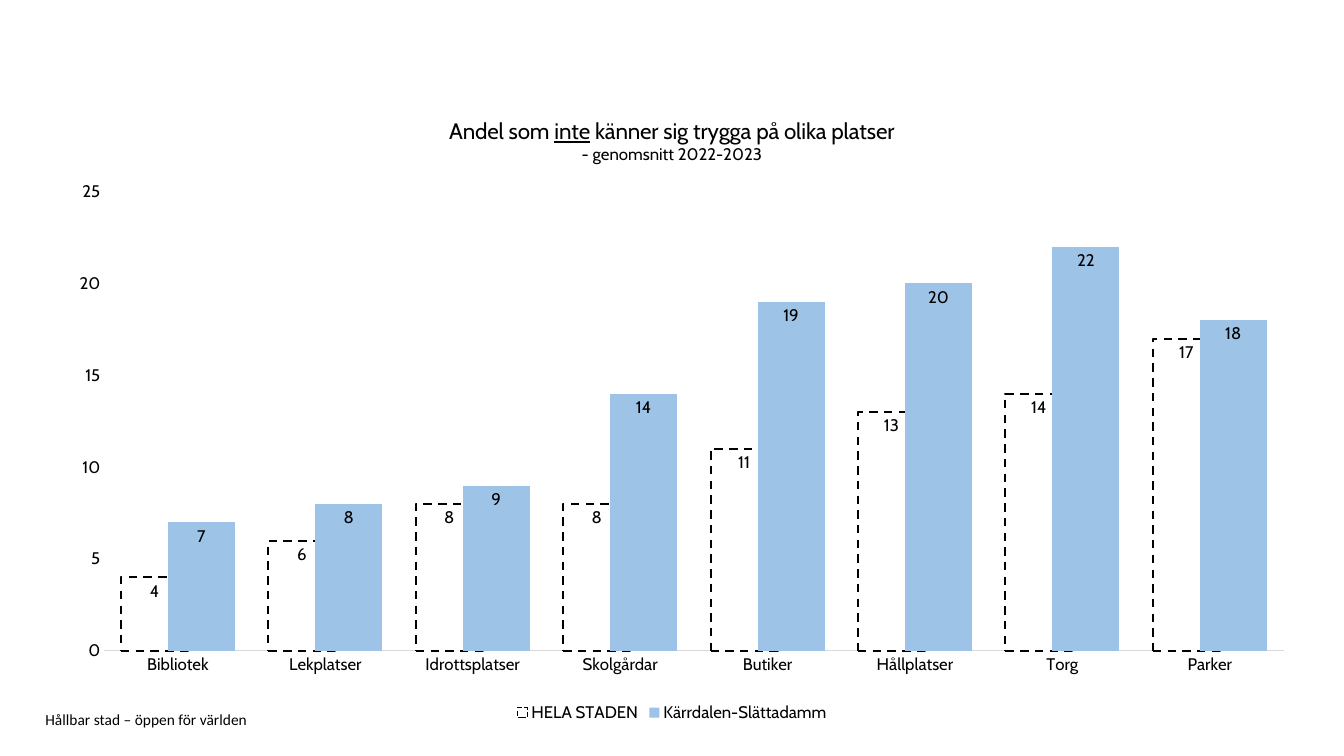
from lxml import etree
from pptx import Presentation
from pptx import util as u
from pptx.chart.data import CategoryChartData
from pptx.dml.color import RGBColor
from pptx.enum import chart as kinds, dml, text
from pptx.oxml import ns

WIDTH, HEIGHT = 13.33, 7.5
MARGIN = 0.45
BLACK, WHITE, BLUE, GREY = "000000", "FFFFFF", "9DC3E6", "D9D9D9"
PLACES = ["Bibliotek", "Lekplatser", "Idrottsplatser", "Skolgårdar",
          "Butiker", "Hållplatser", "Torg", "Parker"]
SHARES = {
    "HELA STADEN": [4, 6, 8, 8, 11, 13, 14, 17],
    "Kärrdalen-Slättadamm": [7, 8, 9, 14, 19, 20, 22, 18],
}
PLOT_AREA = {"x": 0.047, "y": 0.152, "w": 0.941, "h": 0.728}


def color(value):
    return RGBColor.from_string(value)


def set_font(font, name, size):
    font.name = name
    font.size = u.Pt(size)
    font.bold = False
    font.color.rgb = color(BLACK)


def add_footer(slide, wording):
    box = slide.shapes.add_textbox(u.Inches(MARGIN), u.Inches(7.06),
                                   u.Inches(9.45), u.Inches(0.16))
    frame = box.text_frame
    frame.word_wrap = True
    frame.vertical_anchor = text.MSO_ANCHOR.MIDDLE
    frame.margin_left = frame.margin_right = 0
    frame.margin_top = frame.margin_bottom = 0
    para = frame.paragraphs[0]
    para.text = wording
    set_font(para.font, "Calibri", 11)


def add_column_chart(slide):
    data = CategoryChartData(number_format="0")
    data.categories = PLACES
    for name, values in SHARES.items():
        data.add_series(name, values)
    frame = slide.shapes.add_chart(
        kinds.XL_CHART_TYPE.COLUMN_CLUSTERED, u.Inches(MARGIN), u.Inches(0.95),
        u.Inches(WIDTH - 2 * MARGIN), u.Inches(6.26), data)
    chart = frame.chart
    set_font(chart.font, "Cabin", 12)
    chart.has_legend = True
    chart.legend.position = kinds.XL_LEGEND_POSITION.BOTTOM
    chart.legend.include_in_layout = False
    return chart


def set_title(chart):
    frame = chart.chart_title.text_frame
    heading = frame.paragraphs[0]
    for part in ["Andel som ", "inte", " känner sig trygga på olika platser"]:
        span = heading.add_run()
        span.text = part
        set_font(span.font, "Cabin", 16)
        span.font.underline = part == "inte"
    set_font(heading.font, "Cabin", 16)
    period = frame.add_paragraph()
    span = period.add_run()
    span.text = "- genomsnitt 2022-2023"
    for font in (period.font, span.font):
        set_font(font, "Cabin", 12)
    chart.chart_title.include_in_layout = False


def set_axes(chart):
    for axis in (chart.category_axis, chart.value_axis):
        axis.has_major_gridlines = False
        axis.major_tick_mark = kinds.XL_TICK_MARK.NONE
        axis.minor_tick_mark = kinds.XL_TICK_MARK.NONE
        set_font(axis.tick_labels.font, "Cabin", 12)
    line = chart.category_axis.format.line
    line.color.rgb = color(GREY)
    line.width = u.Pt(0.75)
    values = chart.value_axis
    values.format.line.fill.background()
    values.minimum_scale, values.maximum_scale, values.major_unit = 0, 25, 5
    values.tick_labels.number_format = "0"
    values.tick_labels.number_format_is_linked = False


def set_columns(chart):
    plot = chart.plots[0]
    plot.gap_width = 50
    plot.overlap = 30
    plot.vary_by_categories = False
    for series, fill in zip(plot.series, (WHITE, BLUE)):
        series.format.fill.solid()
        series.format.fill.fore_color.rgb = color(fill)
        labels = series.data_labels
        labels.show_value = True
        labels.position = kinds.XL_LABEL_POSITION.INSIDE_END
        labels.number_format = "0"
        labels.number_format_is_linked = False
        set_font(labels.font, "Cabin", 12)
    outline = plot.series[0].format.line
    outline.color.rgb = color(BLACK)
    outline.width = u.Pt(1.5)
    outline.dash_style = dml.MSO_LINE.DASH


def place_plot(chart):
    area = chart._chartSpace.find(".//" + ns.qn("c:plotArea"))
    for old in area.findall(ns.qn("c:layout")):
        area.remove(old)
    layout = etree.Element(ns.qn("c:layout"))
    manual = etree.SubElement(layout, ns.qn("c:manualLayout"))
    settings = {"layoutTarget": "inner", "xMode": "edge", "yMode": "edge", **PLOT_AREA}
    for tag, value in settings.items():
        etree.SubElement(manual, ns.qn("c:" + tag)).set("val", str(value))
    area.insert(0, layout)


def main():
    deck = Presentation()
    deck.slide_width, deck.slide_height = u.Inches(WIDTH), u.Inches(HEIGHT)
    slide = deck.slides.add_slide(deck.slide_layouts[6])
    add_footer(slide, "Hållbar stad – öppen för världen")
    chart = add_column_chart(slide)
    set_title(chart)
    set_axes(chart)
    set_columns(chart)
    place_plot(chart)
    deck.save("out.pptx")


if __name__ == "__main__":
    main()
